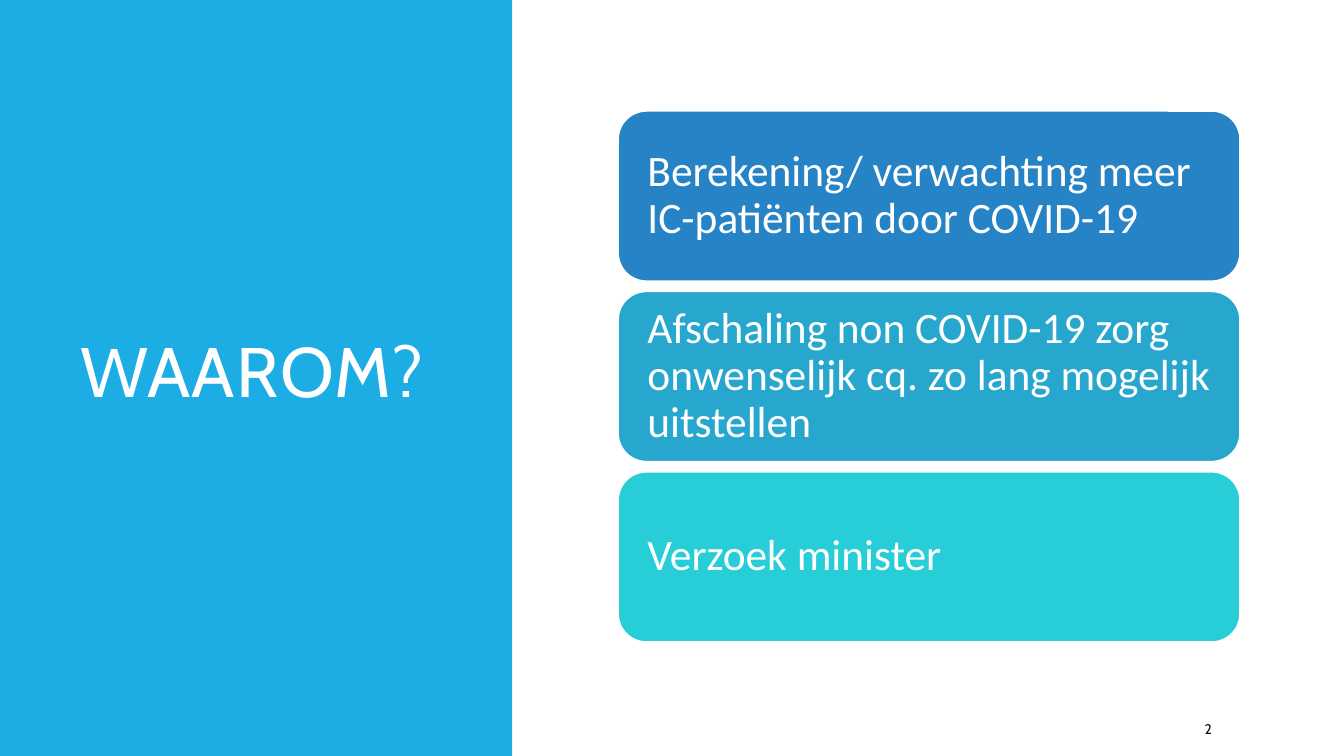
"""Build the slide "Waarom?" with three stacked reasons."""
import pptx
import pptx.dml.color
import pptx.enum.shapes
import pptx.enum.text
import pptx.util

Inches = pptx.util.Inches
SHAPE = pptx.enum.shapes.MSO_SHAPE
COLORS = {
    "panel": "1CADE4",
    "white": "FFFFFF",
    "number": "0D0D0D",
    "blue": "2683C6",
    "sky": "27A7CE",
    "turquoise": "27CED7",
}
REASONS = [
    ("Berekening/ verwachting meer IC-patiënten door COVID-19", "blue"),
    ("Afschaling non COVID-19 zorg onwenselijk cq. zo lang mogelijk uitstellen", "sky"),
    ("Verzoek minister", "turquoise"),
]


def rgb(name):
    return pptx.dml.color.RGBColor.from_string(COLORS[name])


def set_text(sp, text, size, font="Cabin", color="white", line_spacing=1.0,
             inset=(0.1, 0.05), tracking=0):
    tf = sp.text_frame
    tf.word_wrap = True
    tf.auto_size = pptx.enum.text.MSO_AUTO_SIZE.NONE
    tf.vertical_anchor = pptx.enum.text.MSO_ANCHOR.MIDDLE
    tf.margin_left = tf.margin_right = Inches(inset[0])
    tf.margin_top = tf.margin_bottom = Inches(inset[1])
    p = tf.paragraphs[0]
    p.alignment = pptx.enum.text.PP_ALIGN.LEFT
    p.line_spacing = line_spacing
    r = p.add_run()
    r.text = text
    r.font.size = pptx.util.Pt(size)
    r.font.name = font
    r.font.color.rgb = rgb(color)
    if tracking:
        r.font._element.set("spc", str(tracking * 100))


def add_box(s, kind, left, top, width, height, fill, line=None):
    sp = s.shapes.add_shape(kind, Inches(left), Inches(top), Inches(width), Inches(height))
    sp.shadow.inherit = False
    sp.fill.solid()
    sp.fill.fore_color.rgb = rgb(fill)
    if line:
        sp.line.color.rgb = rgb(line)
        sp.line.width = pptx.util.Pt(1.25)
    else:
        sp.line.fill.background()
    return sp


def add_title(s, text):
    sp = s.shapes.title
    sp.left, sp.top = Inches(0.7), Inches(0.7)
    sp.width, sp.height = Inches(3.74), Inches(6.09)
    set_text(sp, text, 50, line_spacing=0.8, tracking=1)


def add_reasons(s, top=1.1, pitch=1.79):
    for i, (text, fill) in enumerate(REASONS):
        sp = add_box(s, SHAPE.ROUNDED_RECTANGLE, 6.13, top + i * pitch, 6.17, 1.69,
                     fill, line="white")
        set_text(sp, text, 31, font="Calibri", line_spacing=0.9, inset=(0.21, 0.21))


def add_slide_number(s, text):
    sp = s.shapes.add_textbox(Inches(11.85), Inches(7.08), Inches(1.06), Inches(0.3))
    set_text(sp, text, 10, color="number")


def main():
    prs = pptx.Presentation()
    prs.slide_width, prs.slide_height = Inches(13.33), Inches(7.5)
    s = prs.slides.add_slide(prs.slide_layouts[5])
    panel = add_box(s, SHAPE.RECTANGLE, 0, 0, 5.08, 7.5, "panel")
    s.shapes.title._element.addprevious(panel._element)
    add_title(s, "WAAROM?")
    add_reasons(s)
    add_slide_number(s, "2")
    prs.save("out.pptx")


if __name__ == "__main__":
    main()
